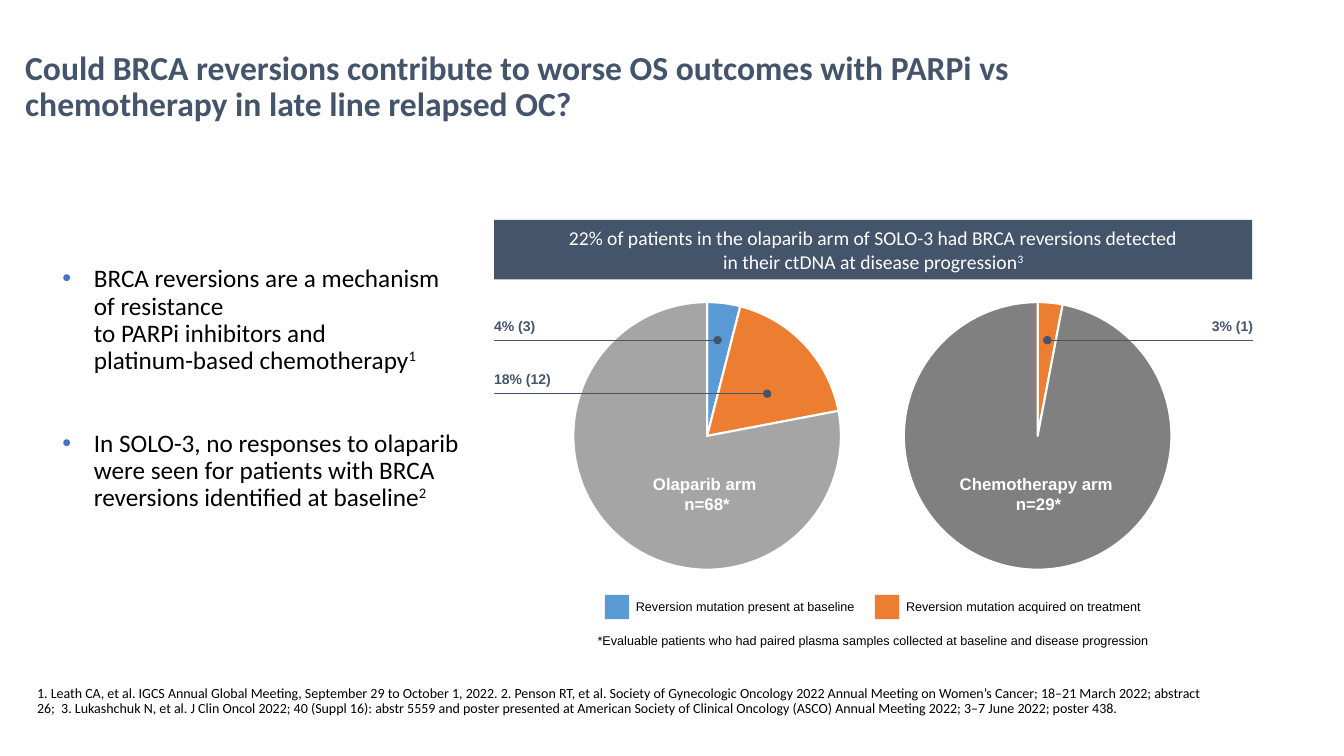
from dataclasses import dataclass
from lxml.etree import SubElement
from pptx import Presentation
from pptx.chart.data import CategoryChartData
from pptx.dml.color import RGBColor
from pptx.enum.chart import XL_CHART_TYPE
from pptx.enum.shapes import MSO_CONNECTOR, MSO_SHAPE
from pptx.enum.text import MSO_ANCHOR, MSO_AUTO_SIZE, PP_ALIGN
from pptx.oxml.ns import qn
from pptx.util import Pt


@dataclass(frozen=True)
class Theme:
    navy: str = "44546A"
    blue: str = "5B9BD5"
    orange: str = "ED7D31"
    light: str = "A5A5A5"
    dark: str = "808080"
    bullet: str = "4472C4"
    black: str = "000000"
    white: str = "FFFFFF"
    head: int = 24
    body: int = 18
    band: int = 14
    arm: int = 12
    small: int = 10
    tiny: int = 9
    sans: str = "Calibri"
    plain: str = "Arial"


theme = Theme()
LEFT, MID, RIGHT = PP_ALIGN.LEFT, PP_ALIGN.CENTER, PP_ALIGN.RIGHT
flush = dict(margin_left=0, margin_top=0, margin_right=0, margin_bottom=0)
center = dict(vertical_anchor=MSO_ANCHOR.MIDDLE)


def write(shape, texts, size, color, name, bold=False, frame={}, **para):
    box = shape.text_frame
    look = dict(word_wrap=True, auto_size=MSO_AUTO_SIZE.NONE) | frame
    for key, value in look.items():
        setattr(box, key, value)
    for i, (text, mark) in enumerate(texts):
        p = box.add_paragraph() if i else box.paragraphs[0]
        p.text = text
        if mark:
            run = p.add_run()
            run.text = mark
            run._r.get_or_add_rPr().set("baseline", "30000")
        for key, value in para.items():
            setattr(p, key, value)
        for run in p.runs:
            for key, value in dict(size=Pt(size), name=name, bold=bold).items():
                setattr(run.font, key, value)
            run.font.color.rgb = RGBColor.from_string(color)
        for br in p._p.findall(qn("a:br")):
            SubElement(br, qn("a:rPr")).set("sz", str(size * 100))


def block(home, spot, color):
    rect = home.add_shape(MSO_SHAPE.RECTANGLE, *map(Pt, spot))
    rect.shadow.inherit = False
    rect.fill.solid()
    rect.fill.fore_color.rgb = RGBColor.from_string(color)
    rect.line.fill.background()
    return rect


deck = Presentation()
deck.slide_width, deck.slide_height = Pt(960), Pt(540)
slide = deck.slides.add_slide(deck.slide_layouts[5])
shapes = slide.shapes

title = shapes.title
for key, value in dict(left=10.8, top=20.2, width=828, height=85).items():
    setattr(title, key, Pt(value))
write(title, [("Could BRCA reversions contribute to worse OS outcomes with PARPi vs "
               "chemotherapy in late line relapsed OC?", "")],
      theme.head, theme.navy, theme.sans, True, center, alignment=LEFT, line_spacing=0.9)

points = shapes.add_textbox(Pt(44.6), Pt(186.5), Pt(283.7), Pt(181.4))
write(points, [
    ("BRCA reversions are a mechanism of resistance\vto PARPi inhibitors and\v"
     "platinum-based chemotherapy", "1"),
    ("In SOLO-3, no responses to olaparib were seen for patients with BRCA "
     "reversions identified at baseline", "2"),
], theme.body, theme.black, theme.sans,
    frame=dict(margin_left=0, margin_right=0), line_spacing=0.9)
points.text_frame.paragraphs[1].space_before = Pt(39.5)
for p in points.text_frame.paragraphs:
    props = p._p.get_or_add_pPr()
    props.set("marL", str(Pt(22.5)))
    props.set("indent", str(-Pt(22.5)))
    tint = SubElement(props, qn("a:buClr"))
    SubElement(tint, qn("a:srgbClr")).set("val", theme.bullet)
    SubElement(props, qn("a:buFont")).set("typeface", theme.plain)
    SubElement(props, qn("a:buChar")).set("char", "•")

band = block(shapes, (353, 157, 541.5, 42.5), theme.navy)
write(band, [("22% of patients in the olaparib arm of SOLO-3 had BRCA reversions detected\v"
              "in their ctDNA at disease progression", "3")],
      theme.band, theme.white, theme.sans, frame=center, alignment=MID)

arms = [
    (398.9, 430.6, "Olaparib arm \vn=68*", (4, 18, 78),
     (theme.blue, theme.orange, theme.light)),
    (635, 667.4, "Chemotherapy arm \vn=29*", (3, 97), (theme.orange, theme.dark)),
]
for x, label, text, values, colors in arms:
    data = CategoryChartData()
    data.categories = [str(i + 1) for i in range(len(values))]
    data.add_series("Series 1", values)
    chart = shapes.add_chart(XL_CHART_TYPE.PIE, Pt(x), Pt(205.2),
                             Pt(212.4), Pt(212.4), data).chart
    chart.has_legend = chart.has_title = False
    chart.font.size, chart.font.name = Pt(theme.small), theme.sans
    chart.font.color.rgb = RGBColor.from_string(theme.black)
    plot = chart.plots[0]
    plot.vary_by_categories = True
    for i, color in enumerate(colors):
        form = plot.series[0].points[i].format
        form.fill.solid()
        form.fill.fore_color.rgb = RGBColor.from_string(color)
        form.line.color.rgb = RGBColor.from_string(theme.white)
        form.line.width = Pt(1.5)
    area = chart._chartSpace.chart.plotArea
    for old in area.findall(qn("c:layout")):
        area.remove(old)
    lay = SubElement(area, qn("c:layout"))
    area.insert(0, lay)
    place = SubElement(lay, qn("c:manualLayout"))
    for tag, value in dict(layoutTarget="inner", xMode="edge", yMode="edge",
                           x="0.05", y="0.05", w="0.9", h="0.9").items():
        SubElement(place, qn("c:" + tag)).set("val", value)
    write(shapes.add_textbox(Pt(label), Pt(334.8), Pt(149), Pt(36)), [(text, "")],
          theme.arm, theme.white, theme.plain, True, alignment=MID)

calls = [
    (353, 512.6, 243, 353, "4% (3)", LEFT),
    (353, 548, 281.2, 353, "18% (12)", LEFT),
    (895, 748.1, 243, 782.7, "3% (1)", RIGHT),
]
for start, end, y, x, text, side in calls:
    line = shapes.add_connector(MSO_CONNECTOR.STRAIGHT, Pt(start), Pt(y), Pt(end), Pt(y))
    line.line.color.rgb = RGBColor.from_string(theme.navy)
    line.line.width = Pt(0.75)
    SubElement(line.line._get_or_add_ln(), qn("a:tailEnd")).set("type", "oval")
    SubElement(line._element.spPr, qn("a:effectLst"))
    write(shapes.add_textbox(Pt(x), Pt(y - 16.5), Pt(112.3), Pt(12)), [(text, "")],
          theme.small, theme.navy, theme.plain, True, flush, alignment=side)

key_group = shapes.add_group_shape()
keys = [(theme.blue, "Reversion mutation present at baseline"),
        (theme.orange, "Reversion mutation acquired on treatment")]
for i, (color, text) in enumerate(keys):
    x = 432 + 193 * i
    block(key_group.shapes, (x, 425, 17.3, 17.3), color)
    write(key_group.shapes.add_textbox(Pt(x + 15.1), Pt(422), Pt(184), Pt(22.5)),
          [(text, "")], theme.tiny, theme.black, theme.plain, frame=center)

write(shapes.add_textbox(Pt(419), Pt(452.2), Pt(409), Pt(11)),
      [("*Evaluable patients who had paired plasma samples collected at baseline "
        "and disease progression", "")],
      theme.tiny, theme.black, theme.plain, frame=flush, alignment=MID)

write(shapes.add_textbox(Pt(19.4), Pt(486.7), Pt(856.8), Pt(42.5)),
      [("1. Leath CA, et al. IGCS Annual Global Meeting, September 29 to October 1, 2022. "
        "2. Penson RT, et al. Society of Gynecologic Oncology 2022 Annual Meeting on "
        "Women’s Cancer; 18–21 March 2022; abstract 26;  3. Lukashchuk N, et al. "
        "J Clin Oncol 2022; 40 (Suppl 16): abstr 5559 and poster presented at American "
        "Society of Clinical Oncology (ASCO) Annual Meeting 2022; 3–7 June 2022; "
        "poster 438.", "")],
      theme.small, theme.black, theme.sans, line_spacing=0.9)

deck.save("out.pptx")
